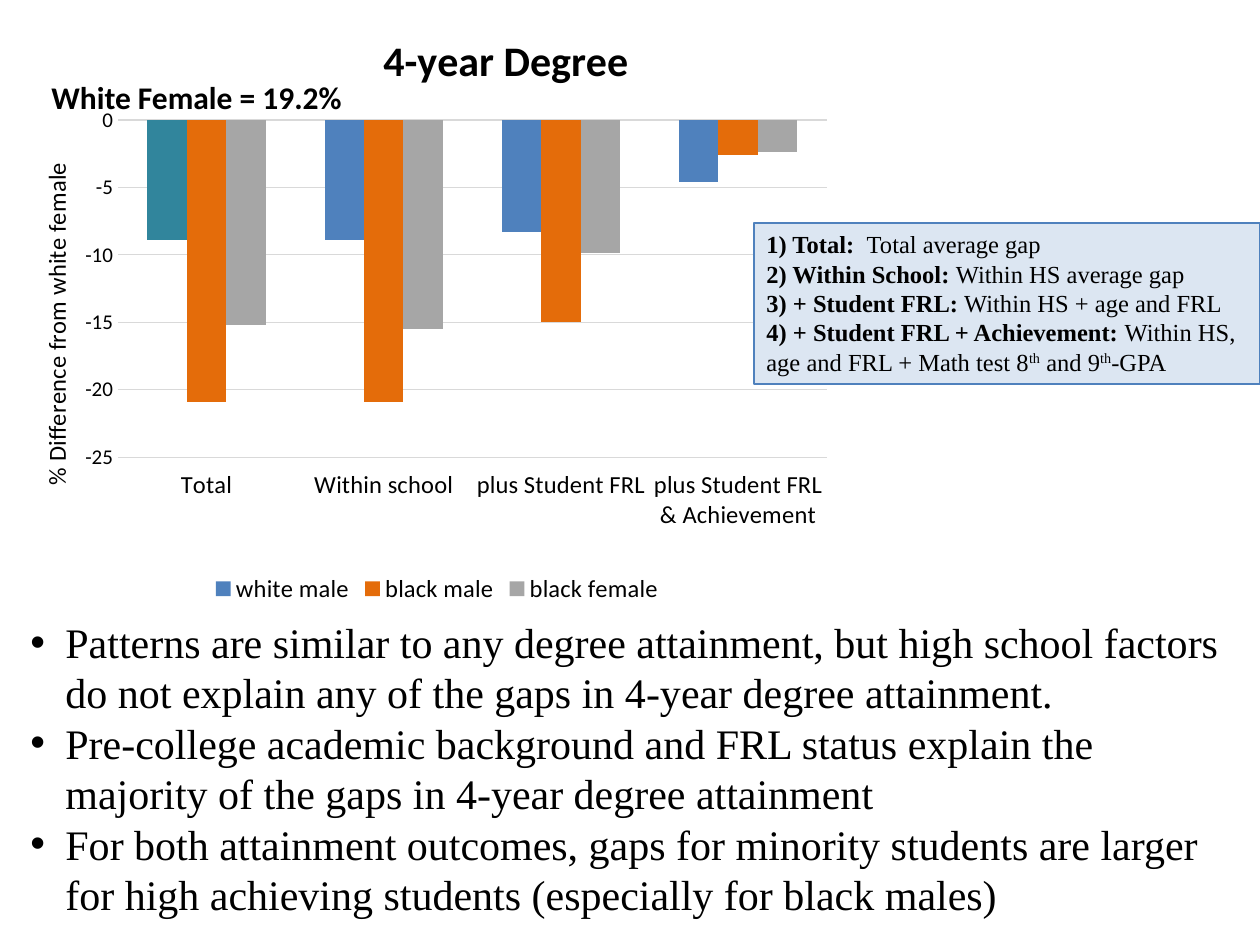
from typing import NamedTuple

from lxml.etree import SubElement
from pptx import Presentation
from pptx.chart.data import CategoryChartData
from pptx.dml.color import RGBColor
from pptx.enum.chart import XL_CHART_TYPE as ChartType, XL_LEGEND_POSITION as LegendPosition
from pptx.enum.chart import XL_TICK_LABEL_POSITION as LabelPosition, XL_TICK_MARK as TickMark
from pptx.enum.shapes import MSO_SHAPE as ShapeKind
from pptx.enum.text import MSO_ANCHOR as Anchor, PP_ALIGN as Align
from pptx.oxml import parse_xml
from pptx.oxml.ns import nsdecls, qn
from pptx.util import Emu, Pt

PX_PER_INCH = 126
SERIF = "Times New Roman"
SANS = "Calibri"
BLACK = "000000"


class Box(NamedTuple):
    left: int
    top: int
    width: int
    height: int


class Series(NamedTuple):
    name: str
    values: tuple[float, ...]
    color: str


class Piece(NamedTuple):
    text: str
    bold: bool = False
    raised: bool = False


CATEGORIES = ["Total", "Within school", "plus Student FRL", "plus Student FRL & Achievement"]
SERIES = [
    Series("white male", (-8.9, -8.9, -8.3, -4.6), "4F81BD"),
    Series("black male", (-20.9, -20.9, -15, -2.6), "E46C0A"),
    Series("black female", (-15.2, -15.5, -9.9, -2.4), "A6A6A6"),
]
FINDINGS = [
    "Patterns are similar to any degree attainment, but high school factors do not explain "
    "any of the gaps in 4-year degree attainment.",
    "Pre-college academic background and FRL status explain the majority of the gaps "
    "in 4-year degree attainment",
    "For both attainment outcomes, gaps for minority students are larger for high achieving "
    "students (especially for black males)",
]
MODELS = [
    [Piece("1) Total:  ", True), Piece("Total average gap")],
    [Piece("2) Within School: ", True), Piece("Within HS average gap")],
    [Piece("3) + Student FRL:", True), Piece(" Within HS + age and FRL")],
    [
        Piece("4) + Student FRL + Achievement: ", True),
        Piece("Within HS, age and FRL + Math test 8"),
        Piece("th", raised=True),
        Piece(" and 9"),
        Piece("th", raised=True),
        Piece("-GPA"),
    ],
]


def px(length: int) -> Emu:
    return Emu(round(length * 914400 / PX_PER_INCH))


def place(box: Box) -> tuple[Emu, ...]:
    return tuple(px(length) for length in box)


def rgb(color: str) -> RGBColor:
    return RGBColor.from_string(color)


def style(font, name: str, size: int, bold: bool | None = None) -> None:
    font.name = name
    font.size = Pt(size)
    font.color.rgb = rgb(BLACK)
    if bold is not None:
        font.bold = bold


def fill_with(target, color: str) -> None:
    target.fill.solid()
    target.fill.fore_color.rgb = rgb(color)


def set_title(owner, title, text: str, size: int, bold: bool, x: float, y: float) -> None:
    paragraph = title.text_frame.paragraphs[0]
    paragraph.add_run().text = text
    style(paragraph.runs[0].font, SANS, size, bold)
    layout = parse_xml(
        f'<c:layout {nsdecls("c")}><c:manualLayout><c:xMode val="edge"/><c:yMode val="edge"/>'
        f'<c:x val="{x}"/><c:y val="{y}"/></c:manualLayout></c:layout>'
    )
    element = owner.find(qn("c:title"))
    for old in element.findall(qn("c:layout")):
        element.remove(old)
    element.find(qn("c:tx")).addnext(layout)


def set_plot_area(chart, x: float, y: float, width: float, height: float) -> None:
    plot_area = chart.element.find(qn("c:chart")).find(qn("c:plotArea"))
    for old in plot_area.findall(qn("c:layout")):
        plot_area.remove(old)
    plot_area.insert(0, parse_xml(
        f'<c:layout {nsdecls("c")}><c:manualLayout><c:layoutTarget val="inner"/>'
        f'<c:xMode val="edge"/><c:yMode val="edge"/><c:x val="{x}"/><c:y val="{y}"/>'
        f'<c:w val="{width}"/><c:h val="{height}"/></c:manualLayout></c:layout>'
    ))


def add_gap_chart(slide, box: Box) -> None:
    data = CategoryChartData()
    data.categories = CATEGORIES
    for series in SERIES:
        data.add_series(series.name, series.values)
    chart = slide.shapes.add_chart(ChartType.COLUMN_CLUSTERED, *place(box), data).chart
    style(chart.font, SANS, 12)
    set_title(chart.element.find(qn("c:chart")), chart.chart_title, "4-year Degree", 24, True, 0.43, 0.04)
    set_plot_area(chart, 0.135, 0.197, 0.811, 0.554)

    plot = chart.plots[0]
    plot.gap_width = 150
    plot.overlap = 0
    plot.vary_by_categories = False
    for drawn, series in zip(plot.series, SERIES):
        drawn.invert_if_negative = False
        fill_with(drawn.format, series.color)
    fill_with(plot.series[0].points[0].format, "31859C")

    category_axis, value_axis = chart.category_axis, chart.value_axis
    for axis, size in ((category_axis, 14), (value_axis, 12)):
        axis.major_tick_mark = axis.minor_tick_mark = TickMark.NONE
        axis.format.line.fill.background()
        style(axis.tick_labels.font, SANS, size)
    category_axis.tick_label_position = LabelPosition.LOW
    value_axis.minimum_scale, value_axis.maximum_scale, value_axis.major_unit = -25, 0, 5
    value_axis.major_gridlines.format.line.color.rgb = rgb("D9D9D9")
    value_axis.major_gridlines.format.line.width = Pt(0.75)
    set_title(value_axis._element, value_axis.axis_title,
              "% Difference from white female", 14, False, 0.04, 0.26)

    chart.has_legend = True
    chart.legend.position = LegendPosition.BOTTOM
    chart.legend.include_in_layout = False
    style(chart.legend.font, SANS, 14)


def add_findings(slide, box: Box) -> None:
    frame = slide.shapes.add_textbox(*place(box)).text_frame
    frame.word_wrap = True
    frame.vertical_anchor = Anchor.MIDDLE
    frame.margin_bottom = px(42)
    for index, finding in enumerate(FINDINGS):
        paragraph = frame.paragraphs[0] if index == 0 else frame.add_paragraph()
        paragraph.text = finding
        properties = paragraph._p.get_or_add_pPr()
        properties.set("marL", str(px(35)))
        properties.set("indent", str(-px(35)))
        SubElement(properties, qn("a:buFont"), typeface="Arial")
        SubElement(properties, qn("a:buChar"), char="•")
        style(paragraph.font, SERIF, 24)


def add_baseline_label(slide, box: Box) -> None:
    frame = slide.shapes.add_textbox(*place(box)).text_frame
    frame.word_wrap = False
    frame.text = "White Female = 19.2%"
    style(frame.paragraphs[0].font, SANS, 18, True)


def add_model_key(slide, box: Box) -> None:
    shape = slide.shapes.add_shape(ShapeKind.RECTANGLE, *place(box))
    shape.shadow.inherit = False
    fill_with(shape, "DCE6F2")
    shape.line.color.rgb = rgb("4F81BD")
    shape.line.width = Pt(0.75)
    frame = shape.text_frame
    frame.word_wrap = True
    frame.vertical_anchor = Anchor.TOP
    for index, pieces in enumerate(MODELS):
        paragraph = frame.paragraphs[0] if index == 0 else frame.add_paragraph()
        paragraph.alignment = Align.LEFT
        style(paragraph.font, SERIF, 14)
        for piece in pieces:
            run = paragraph.add_run()
            run.text = piece.text
            run.font.bold = piece.bold
            if piece.raised:
                run._r.get_or_add_rPr().set("baseline", "30000")


def main() -> None:
    presentation = Presentation()
    presentation.slide_width, presentation.slide_height = px(1260), px(945)
    slide = presentation.slides.add_slide(presentation.slide_layouts[6])
    add_gap_chart(slide, Box(0, 0, 874, 609))
    add_findings(slide, Box(18, 626, 1228, 319))
    add_baseline_label(slide, Box(39, 72, 319, 50))
    add_model_key(slide, Box(754, 223, 506, 161))
    presentation.save("out.pptx")


if __name__ == "__main__":
    main()
